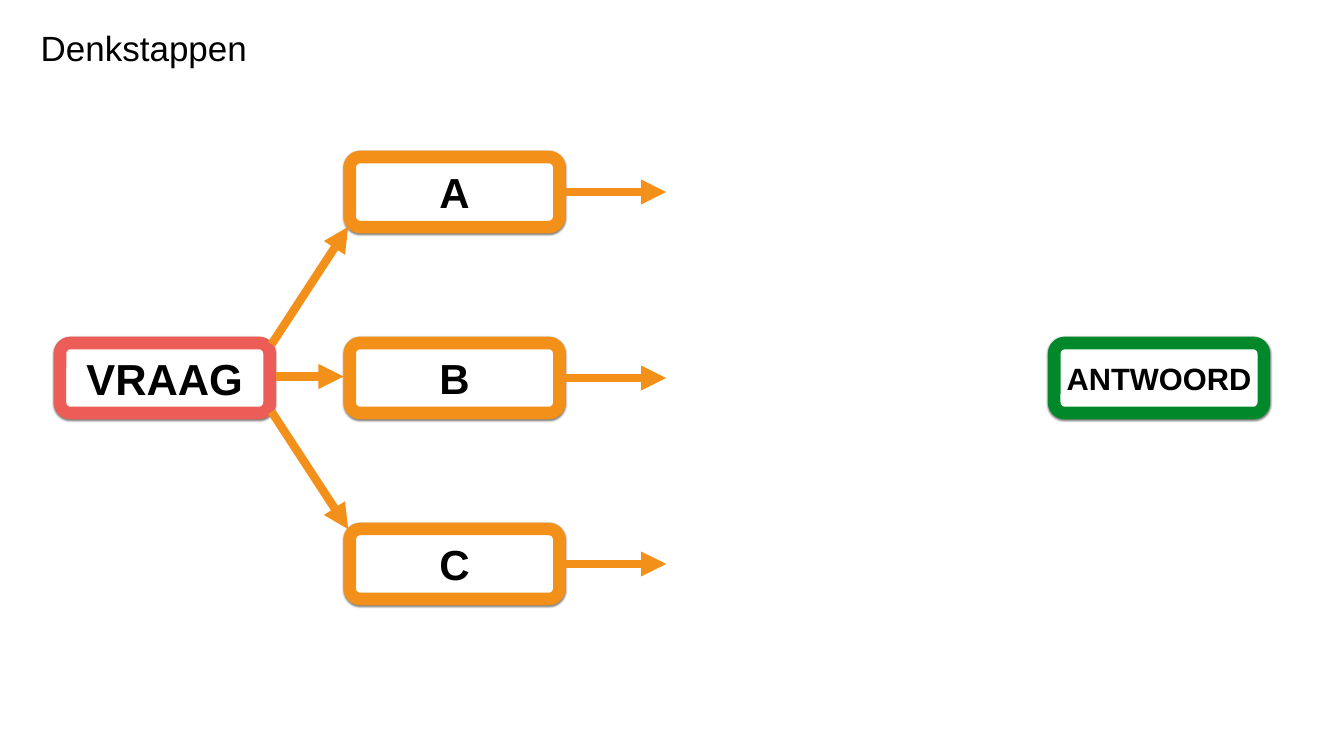
from dataclasses import dataclass

from lxml import etree
from pptx import Presentation
from pptx.dml.color import RGBColor
from pptx.enum.shapes import MSO_CONNECTOR, MSO_SHAPE
from pptx.enum.text import MSO_ANCHOR, MSO_AUTO_SIZE, PP_ALIGN
from pptx.oxml import parse_xml
from pptx.oxml.ns import nsdecls, qn
from pptx.util import Inches, Pt

ROUNDED = MSO_SHAPE.ROUNDED_RECTANGLE
STRAIGHT = MSO_CONNECTOR.STRAIGHT
MIDDLE = MSO_ANCHOR.MIDDLE
CENTER = PP_ALIGN.CENTER
FIT_SHAPE = MSO_AUTO_SIZE.SHAPE_TO_FIT_TEXT

COLORS = {
    "question": "EC5D57",
    "step": "F39019",
    "answer": "00882B",
    "text": "000000",
    "paper": "FFFFFF",
}
FONT = "Arial"
PAGE_WIDTH, PAGE_HEIGHT = 26.67, 15
BOX_WIDTH, BOX_HEIGHT = 4.16, 1.39
COLUMNS = {"question": 1.19, "step": 6.94, "answer": 20.92}
ROW_PITCH = 3.69
ROWS = [PAGE_HEIGHT / 2 + offset * ROW_PITCH for offset in (-1, 0, 1)]
MIDDLE_ROW = 1


@dataclass
class Box:
    label: str
    kind: str
    row: int
    size: int


@dataclass
class Arrow:
    start: tuple[float, float]
    end: tuple[float, float]


BOXES = [
    Box("VRAAG", "question", MIDDLE_ROW, 62),
    Box("ANTWOORD", "answer", MIDDLE_ROW, 44),
    *(Box(label, "step", row, 60) for row, label in enumerate("ABC")),
]


def color(name: str) -> RGBColor:
    return RGBColor.from_string(COLORS[name])


def write(shape, text: str, size: int, bold: bool = False) -> None:
    frame = shape.text_frame
    frame.margin_left = frame.margin_right = 0
    frame.margin_top = frame.margin_bottom = 0
    frame.vertical_anchor = MIDDLE
    para = frame.paragraphs[0]
    para.alignment = CENTER
    span = para.add_run()
    span.text = text
    span.font.name = FONT
    span.font.size = Pt(size)
    span.font.bold = bold
    span.font.color.rgb = color("text")


def add_soft_shadow(shape) -> None:
    properties = shape.element.spPr
    for effects in properties.findall(qn("a:effectLst")):
        properties.remove(effects)
    properties.append(parse_xml(
        f'<a:effectLst {nsdecls("a")}>'
        f'<a:outerShdw blurRad="{Pt(3)}" dist="{Pt(2)}" dir="5400000" rotWithShape="0">'
        f'<a:srgbClr val="{COLORS["text"]}"><a:alpha val="50000"/></a:srgbClr>'
        '</a:outerShdw></a:effectLst>'))


def draw_title(page, text: str) -> None:
    title = page.shapes.title
    title.left, title.top = Inches(0.71), Inches(0.47)
    title.width, title.height = Inches(4.29), Inches(0.94)
    title.fill.solid()
    title.fill.fore_color.rgb = color("paper")
    write(title, text, 50)
    title.text_frame.word_wrap = False
    title.text_frame.auto_size = FIT_SHAPE


def draw_box(page, box: Box) -> None:
    shape = page.shapes.add_shape(
        ROUNDED, Inches(COLUMNS[box.kind]), Inches(ROWS[box.row] - BOX_HEIGHT / 2),
        Inches(BOX_WIDTH), Inches(BOX_HEIGHT))
    shape.adjustments[0] = 0.15
    shape.fill.solid()
    shape.fill.fore_color.rgb = color("paper")
    shape.line.color.rgb = color(box.kind)
    shape.line.width = Pt(18)
    add_soft_shadow(shape)
    write(shape, box.label, box.size, bold=True)


def draw_arrow(page, arrow: Arrow) -> None:
    points = [Inches(length) for length in (*arrow.start, *arrow.end)]
    connector = page.shapes.add_connector(STRAIGHT, *points)
    connector.line.color.rgb = color("step")
    connector.line.width = Pt(12)
    etree.SubElement(connector.line._get_or_add_ln(), qn("a:tailEnd"), type="triangle")
    etree.SubElement(connector.element.spPr, qn("a:effectLst"))


def plan_arrows() -> list[Arrow]:
    """Fan out from the question to the steps, then lead on from each step."""
    center = ROWS[MIDDLE_ROW]
    fan = [Arrow((5.39, center + side * 0.67), (6.91, center + side * 3))
           for side in (-1, 1)]
    straight = Arrow((5.48, center - 0.03), (6.82, center - 0.03))
    onward = [Arrow((11.22, row), (13.22, row)) for row in ROWS]
    return [*fan, straight, *onward]


def main() -> None:
    deck = Presentation()
    deck.slide_width, deck.slide_height = Inches(PAGE_WIDTH), Inches(PAGE_HEIGHT)
    page = deck.slides.add_slide(deck.slide_layouts[5])
    draw_title(page, "Denkstappen")
    for box in BOXES:
        draw_box(page, box)
    for arrow in plan_arrows():
        draw_arrow(page, arrow)
    deck.save("out.pptx")


if __name__ == "__main__":
    main()
